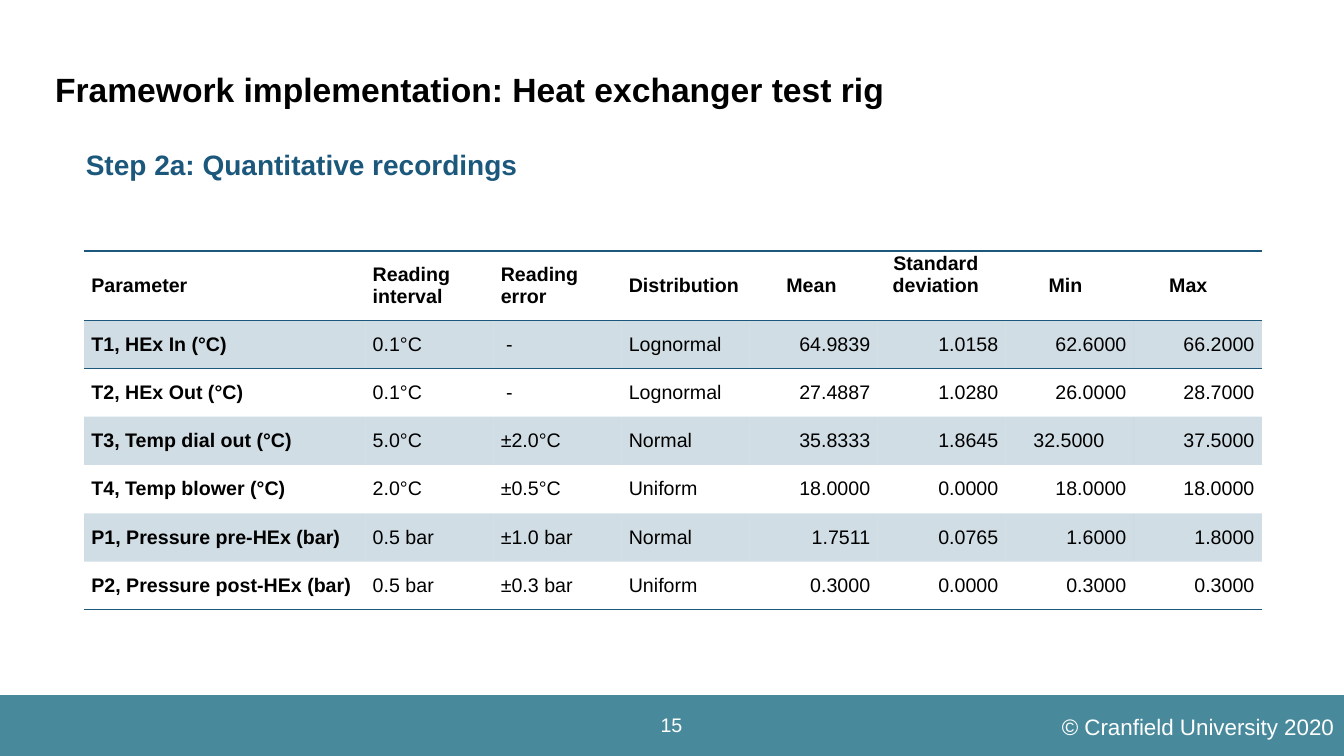
from lxml import etree
from pptx import Presentation, util as u
from pptx.dml.color import RGBColor
from pptx.enum import shapes, text
from pptx.oxml.ns import qn

PX = 9525
THEME = {
    "font": "Arial", "black": "000000", "white": "FFFFFF",
    "navy": "1B587C", "teal": "488A9C",
    "title": 24, "step": 20, "foot": 16, "cell": 14,
}
LEFT, MID, RIGHT = text.PP_ALIGN.LEFT, text.PP_ALIGN.CENTER, text.PP_ALIGN.RIGHT


def write(frame, words, size, color, bold, align):
    para = frame.paragraphs[0]
    para.alignment = align
    run = para.add_run()
    run.text = words
    look = {"name": THEME["font"], "size": u.Pt(THEME[size]), "bold": bold}
    for key, val in look.items():
        setattr(run.font, key, val)
    run.font.color.rgb = RGBColor.from_string(THEME[color])
    return para


def block(kind, box, fill):
    shape = slide.shapes.add_shape(kind, *[n * PX for n in box])
    shape.shadow.inherit = False
    shape.fill.solid()
    shape.fill.fore_color.rgb = RGBColor.from_string(THEME[fill])
    shape.line.fill.background()
    return shape


deck = Presentation()
deck.slide_width, deck.slide_height = 1280 * PX, 720 * PX
slide = deck.slides.add_slide(deck.slide_layouts[6])

block(shapes.MSO_SHAPE.RECTANGLE, (0, 662, 1280, 58), "teal")

labels = [
    ((613, 673, 53, 35), "15", "cell", "white", False, MID, "MIDDLE"),
    ((876, 674, 404, 36), "© Cranfield University 2020", "foot", "white", False, RIGHT, "TOP"),
    ((43, 42, 1089, 90), "Framework implementation: Heat exchanger test rig",
     "title", "black", True, LEFT, "MIDDLE"),
]
for box, words, size, color, bold, align, anchor in labels:
    frame = slide.shapes.add_textbox(*[n * PX for n in box]).text_frame
    frame.word_wrap = True
    frame.vertical_anchor = text.MSO_ANCHOR[anchor]
    para = write(frame, words, size, color, bold, align)
para.line_spacing = 0.9

rows = [
    ["Parameter", "Reading interval", "Reading error", "Distribution", "Mean",
     "Standard deviation", "Min", "Max"],
    ["T1, HEx In (°C)", "0.1°C", " -", "Lognormal", "64.9839", "1.0158", "62.6000", "66.2000"],
    ["T2, HEx Out (°C)", "0.1°C", " -", "Lognormal", "27.4887", "1.0280", "26.0000", "28.7000"],
    ["T3, Temp dial out (°C)", "5.0°C", "±2.0°C", "Normal", "35.8333", "1.8645", "32.5000", "37.5000"],
    ["T4, Temp blower (°C)", "2.0°C", "±0.5°C", "Uniform", "18.0000", "0.0000", "18.0000", "18.0000"],
    ["P1, Pressure pre-HEx (bar)", "0.5 bar", "±1.0 bar", "Normal", "1.7511", "0.0765", "1.6000", "1.8000"],
    ["P2, Pressure post-HEx (bar)", "0.5 bar", "±0.3 bar", "Uniform", "0.3000", "0.0000", "0.3000", "0.3000"],
]
HEAD, ROW, WIDE, COL = 64, 46, 268, 122
last = len(rows) - 1
holder = slide.shapes.add_table(
    len(rows), len(rows[0]), 80 * PX, 239 * PX,
    (WIDE + 7 * COL) * PX, (HEAD + last * ROW) * PX)
grid = holder.table
grid.first_row = grid.horz_banding = False
style = next(holder.element.iter(qn("a:tableStyleId")))
style.text = "{2D5ABB26-0587-4C30-8999-92F81FD0307C}"
for c, col in enumerate(grid.columns):
    col.width = (COL if c else WIDE) * PX
for r, row in enumerate(grid.rows):
    row.height = (ROW if r else HEAD) * PX

shift = {(0, 3): 3, (0, 4): 4, (0, 5): 11, (0, 6): 8, (0, 7): 18, (3, 6): 21}
lift = {(0, 5): 21}
for r, row in enumerate(rows):
    for c, words in enumerate(row):
        cell = grid.cell(r, c)
        look = {
            "margin_left": 7 * PX, "margin_right": (7 + shift.get((r, c), 0)) * PX,
            "margin_top": 0, "margin_bottom": lift.get((r, c), 0) * PX,
            "vertical_anchor": text.MSO_ANCHOR.MIDDLE,
        }
        for key, val in look.items():
            setattr(cell, key, val)
        if r == 0:
            align = LEFT if c < 3 else MID
        else:
            align = LEFT if c < 4 else RIGHT
        write(cell.text_frame, words, "cell", "black", r == 0 or c == 0, align)

        props = next(cell.text_frame._txBody.getparent().iter(qn("a:tcPr")))
        if r % 2:
            cell.fill.solid()
            cell.fill.fore_color.rgb = RGBColor.from_string(THEME["navy"])
            tint = next(props.iter(qn("a:srgbClr")))
            etree.SubElement(tint, qn("a:alpha"), val="20000")
        else:
            cell.fill.background()
        edges = {0: ["a:lnT", "a:lnB"], 1: ["a:lnT"], last: ["a:lnB"]}.get(r, [])
        for i, tag in enumerate(edges):
            edge = etree.Element(qn(tag), w=str(u.Pt(1)))
            paint = etree.SubElement(edge, qn("a:solidFill"))
            etree.SubElement(paint, qn("a:srgbClr"), val=THEME["navy"])
            props.insert(i, edge)

step = block(shapes.MSO_SHAPE.ROUNDED_RECTANGLE, (70, 133, 442, 46), "white")
write(step.text_frame, "Step 2a: Quantitative recordings", "step", "navy", True, LEFT)

deck.save("out.pptx")
